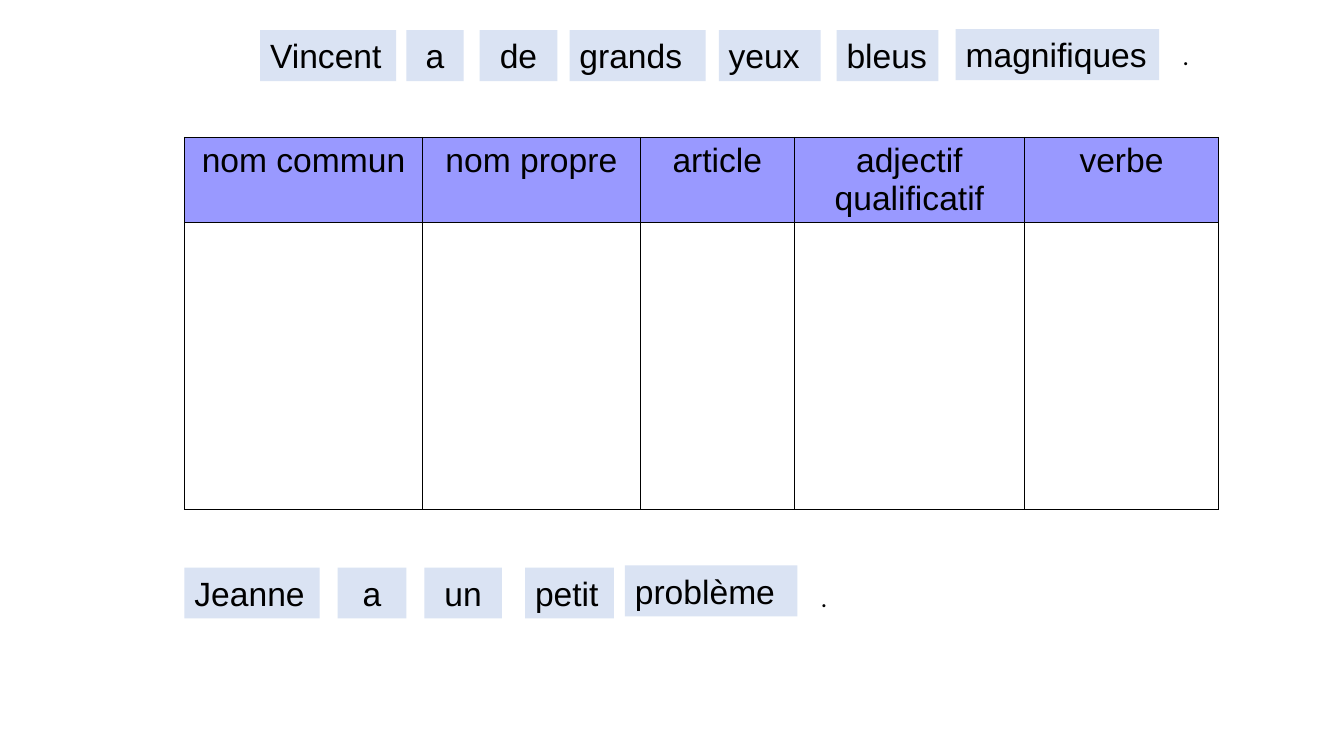
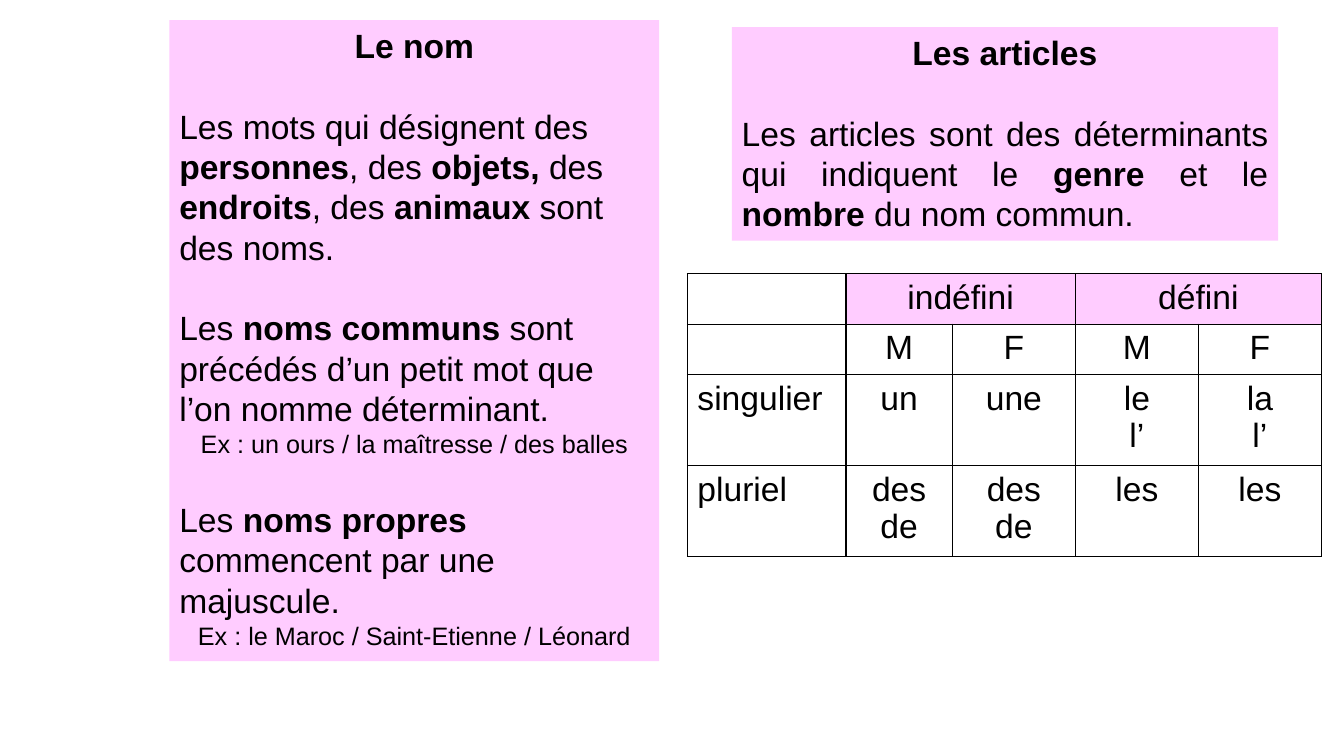
from dataclasses import dataclass

from lxml import etree
from pptx import Presentation
from pptx.dml.color import RGBColor
from pptx.enum.shapes import MSO_SHAPE
from pptx.enum.text import MSO_ANCHOR, PP_ALIGN
from pptx.oxml.ns import qn
from pptx.util import Pt

RECTANGLE = MSO_SHAPE.RECTANGLE
TOP = MSO_ANCHOR.TOP
LEFT, CENTER, JUSTIFY = PP_ALIGN.LEFT, PP_ALIGN.CENTER, PP_ALIGN.JUSTIFY

COLORS = {
    "text": "000000",
    "border": "000000",
    "tile": "DAE3F3",
    "header": "9999FF",
    "lesson": "FFCCFF",
}
BODY_FONT, DOT_FONT = "Arial", "Calibri"
BODY_SIZE, SMALL_SIZE = 24, 18
BLANK_LINE = 28.8
TILE_HEIGHT = 36.3


@dataclass(frozen=True)
class Line:
    """One paragraph; text between asterisks is bold."""
    text: str
    align: PP_ALIGN = LEFT
    size: float = BODY_SIZE
    before: float = 0
    font: str = BODY_FONT


@dataclass(frozen=True)
class Box:
    left: float
    top: float
    width: float
    height: float
    lines: tuple[Line, ...]
    fill: str | None = None


@dataclass(frozen=True)
class Cell:
    text: str = ""
    fill: str | None = None
    align: PP_ALIGN = CENTER
    span: int = 1


@dataclass(frozen=True)
class Grid:
    left: float
    top: float
    columns: tuple[float, ...]
    rows: tuple[float, ...]
    cells: tuple[tuple[Cell, ...], ...]


def color(name: str) -> RGBColor:
    return RGBColor.from_string(COLORS[name])


def write_lines(text_frame, lines: tuple[Line, ...]) -> None:
    for index, line in enumerate(lines):
        paragraph = text_frame.add_paragraph() if index else text_frame.paragraphs[0]
        paragraph.alignment = line.align
        paragraph.space_before = Pt(line.before)
        for position, part in enumerate(line.text.split("*")):
            if part:
                run = paragraph.add_run()
                run.text = part
                run.font.name = line.font
                run.font.size = Pt(line.size)
                run.font.bold = position % 2 == 1
                run.font.color.rgb = color("text")


def draw_box(slide, box: Box) -> None:
    frame = Pt(box.left), Pt(box.top), Pt(box.width), Pt(box.height)
    if box.fill:
        shape = slide.shapes.add_shape(RECTANGLE, *frame)
        shape.shadow.inherit = False
        shape.fill.solid()
        shape.fill.fore_color.rgb = color(box.fill)
        shape.line.fill.background()
    else:
        shape = slide.shapes.add_textbox(*frame)
    shape.text_frame.word_wrap = True
    shape.text_frame.vertical_anchor = TOP
    write_lines(shape.text_frame, box.lines)


def add_borders(cell) -> None:
    properties = cell._tc.get_or_add_tcPr()
    for side in ("a:lnL", "a:lnR", "a:lnT", "a:lnB"):
        border = etree.SubElement(properties, qn(side), w=str(Pt(1)))
        fill = etree.SubElement(border, qn("a:solidFill"))
        etree.SubElement(fill, qn("a:srgbClr"), val=COLORS["border"])


def draw_grid(slide, grid: Grid) -> None:
    table = slide.shapes.add_table(
        len(grid.rows), len(grid.columns), Pt(grid.left), Pt(grid.top),
        Pt(sum(grid.columns)), Pt(sum(grid.rows))).table
    table.first_row = table.horz_banding = False
    for column, width in zip(table.columns, grid.columns):
        column.width = Pt(width)
    for row, height in zip(table.rows, grid.rows):
        row.height = Pt(height)
    for cell in table.iter_cells():
        add_borders(cell)
        cell.fill.background()
    for row_index, row_cells in enumerate(grid.cells):
        column_index = 0
        for content in row_cells:
            cell = table.cell(row_index, column_index)
            if content.span > 1:
                cell.merge(table.cell(row_index, column_index + content.span - 1))
            if content.fill:
                cell.fill.solid()
                cell.fill.fore_color.rgb = color(content.fill)
            lines = tuple(Line(text, content.align) for text in content.text.split("\n"))
            write_lines(cell.text_frame, lines)
            column_index += content.span


def tile(word: str, left: float, width: float, top: float, align: PP_ALIGN = LEFT) -> Box:
    return Box(left, top, width, TILE_HEIGHT, (Line(word, align),), "tile")


def full_stop(left: float, top: float) -> Box:
    return Box(left, top, 38.2, 29, (Line(".", CENTER, SMALL_SIZE, font=DOT_FONT),))


# Slide 1: two sentences to sort into word classes
FIRST_TOP, SECOND_TOP = 21.6, 405.4
SENTENCES = (
    tile("Vincent", 185.8, 97.2, FIRST_TOP),
    tile("a", 290.2, 41, FIRST_TOP, CENTER),
    tile("de", 342.7, 55.4, FIRST_TOP, CENTER),
    tile("grands", 406.8, 97.2, FIRST_TOP),
    tile("yeux", 513.4, 72.7, FIRST_TOP),
    tile("bleus", 597.6, 72.7, FIRST_TOP),
    tile("magnifiques", 682.6, 145.4, FIRST_TOP - 0.7),
    full_stop(828, 25.2),
    tile("Jeanne", 131.8, 96.5, SECOND_TOP),
    tile("a", 241.2, 49, SECOND_TOP, CENTER),
    tile("un", 303.1, 55.4, SECOND_TOP, CENTER),
    tile("petit", 375.1, 63.4, SECOND_TOP),
    tile("problème", 446.4, 123.1, SECOND_TOP - 1.5),
    full_stop(569.5, 412.6),
)
WORD_CLASSES = ("nom commun", "nom propre", "article", "adjectif qualificatif", "verbe")
SORTING_GRID = Grid(
    131.8, 98.2, (170, 155.5, 110.2, 164.2, 138.9), (60.7, 205),
    (tuple(Cell(name, "header") for name in WORD_CLASSES),))

# Slide 2: lessons on nouns and articles
LESSONS = (
    Box(121, 14.4, 349.9, 457.9, (
        Line("*Le nom*", CENTER),
        Line("Les mots qui désignent des *personnes*, des *objets,* des "
             "*endroits*, des *animaux* sont des noms.", before=BLANK_LINE),
        Line("Les *noms communs *sont précédés d’un petit mot que l’on nomme "
             "déterminant.", before=BLANK_LINE),
        Line("Ex : un ours / la maîtresse / des balles", CENTER, SMALL_SIZE),
        Line("Les *noms propres *commencent par une majuscule.", before=BLANK_LINE),
        Line("Ex : le Maroc / Saint-Etienne / Léonard", CENTER, SMALL_SIZE),
    ), "lesson"),
    Box(522.7, 19.4, 390.2, 152.6, (
        Line("*Les articles*", CENTER),
        Line("Les articles sont des déterminants qui indiquent le *genre* et le "
             "*nombre* du nom commun.", JUSTIFY, before=BLANK_LINE),
    ), "lesson"),
)
ARTICLE_GRID = Grid(
    491, 195.5, (113.3, 76, 87.9, 87.9, 87.9), (36, 36, 65, 65), (
        (Cell(), Cell("indéfini", "lesson", span=2), Cell("défini", "lesson", span=2)),
        (Cell(), *(Cell(gender) for gender in "MFMF")),
        (Cell("singulier", align=LEFT), Cell("un"), Cell("une"),
         Cell("le\nl’"), Cell("la\nl’")),
        (Cell("pluriel", align=LEFT), Cell("des\nde"), Cell("des\nde"),
         Cell("les"), Cell("les")),
    ))


def main() -> None:
    presentation = Presentation()
    presentation.slide_width, presentation.slide_height = Pt(960), Pt(540)
    blank_layout = presentation.slide_layouts[6]
    for grid, boxes in ((SORTING_GRID, SENTENCES), (ARTICLE_GRID, LESSONS)):
        slide = presentation.slides.add_slide(blank_layout)
        draw_grid(slide, grid)
        for box in boxes:
            draw_box(slide, box)
    presentation.save("out.pptx")


if __name__ == "__main__":
    main()
